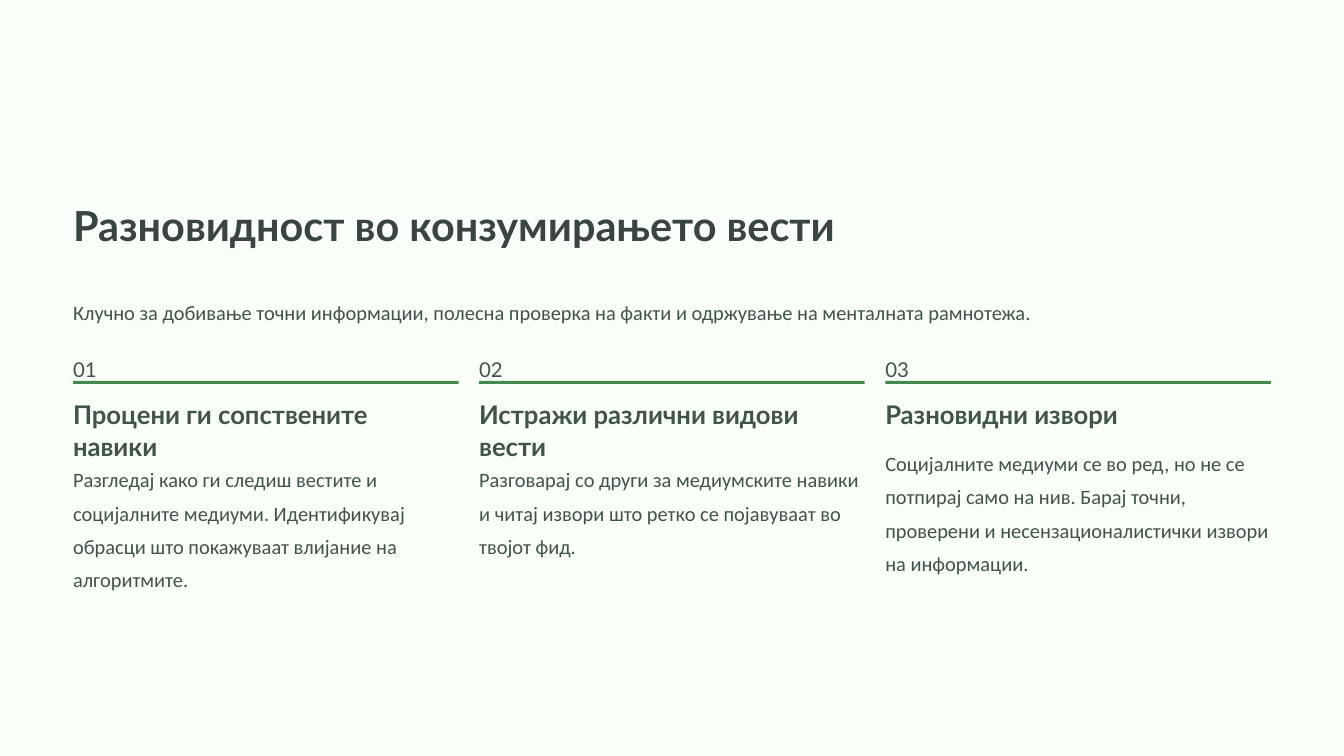
from dataclasses import dataclass

from pptx import Presentation
from pptx import util as u
from pptx.dml.color import RGBColor
from pptx.enum import shapes

PAPER, TITLE, BODY, GREEN = "FAFFFA", "3B4540", "405449", "438951"
WIDTH, HEIGHT = 40.64, 22.86
LEFT, PITCH, COLUMN, CONTENT = 2.21, 12.28, 11.66, 36.22


@dataclass
class Style:
    font: str
    size: float
    leading: float
    color: str = BODY
    bold: bool = False


@dataclass
class Step:
    heading: str
    body: str
    body_top: float


TITLE_STYLE = Style("Lato", 35.5, 44.5, TITLE, True)
HEADING_STYLE = Style("Lato", 22, 27.5, bold=True)
NUMBER_STYLE = Style("Lato", 17.5, 28.5)
BODY_STYLE = Style("Calibri", 17.5, 28.5)

STEPS = [
    Step("Процени ги сопствените\nнавики",
         "Разгледај како ги следиш вестите и социјалните медиуми. "
         "Идентификувај обрасци што покажуваат влијание на алгоритмите.", 13.87),
    Step("Истражи различни видови\nвести",
         "Разговарај со други за медиумските навики и читај извори "
         "што ретко се појавуваат во твојот фид.", 13.87),
    Step("Разновидни извори",
         "Социјалните медиуми се во ред, но не се потпирај само на нив. "
         "Барај точни, проверени и несензационалистички извори на информации.", 13.38),
]


def rgb(color: str) -> RGBColor:
    return RGBColor.from_string(color)


def add_text(s, x: float, y: float, w: float, h: float, content: str,
             style: Style) -> None:
    """Add a text box without margins, one paragraph per line; lengths in cm."""
    tf = s.shapes.add_textbox(u.Cm(x), u.Cm(y), u.Cm(w), u.Cm(h)).text_frame
    tf.margin_left = tf.margin_right = tf.margin_top = tf.margin_bottom = 0
    tf.word_wrap = True
    tf.text = content
    for p in tf.paragraphs:
        p.line_spacing = u.Pt(style.leading)
        for r in p.runs:
            r.font.name = style.font
            r.font.size = u.Pt(style.size)
            r.font.bold = style.bold
            r.font.color.rgb = rgb(style.color)


def add_bar(s, x: float, y: float, w: float, h: float, color: str) -> None:
    """Add a plain filled rectangle; lengths in cm."""
    sp = s.shapes.add_shape(shapes.MSO_SHAPE.RECTANGLE,
                            u.Cm(x), u.Cm(y), u.Cm(w), u.Cm(h))
    sp.shadow.inherit = False
    sp.fill.solid()
    sp.fill.fore_color.rgb = rgb(color)
    sp.line.fill.background()


def add_step(s, index: int, step: Step) -> None:
    x = LEFT + index * PITCH
    add_text(s, x, 10.54, 1.5, 0.79, f"{index + 1:02}", NUMBER_STYLE)
    add_bar(s, x, 11.52, COLUMN, 0.09, GREEN)
    heading_lines = len(step.heading.splitlines())
    add_text(s, x, 12.01, COLUMN, 0.97 * heading_lines, step.heading, HEADING_STYLE)
    add_text(s, x, step.body_top, COLUMN, 4.02, step.body, BODY_STYLE)


def main() -> None:
    prs = Presentation()
    prs.slide_width, prs.slide_height = u.Cm(WIDTH), u.Cm(HEIGHT)
    s = prs.slides.add_slide(prs.slide_layouts[6])

    add_bar(s, 0, 0, WIDTH, HEIGHT, PAPER)
    add_text(s, LEFT, 5.99, 24, 1.57, "Разновидност во конзумирањето вести", TITLE_STYLE)
    add_text(s, LEFT, 8.81, CONTENT, 1.02,
             "Клучно за добивање точни информации, полесна проверка на факти "
             "и одржување на менталната рамнотежа.", BODY_STYLE)
    for index, step in enumerate(STEPS):
        add_step(s, index, step)
    prs.save("out.pptx")


if __name__ == "__main__":
    main()
